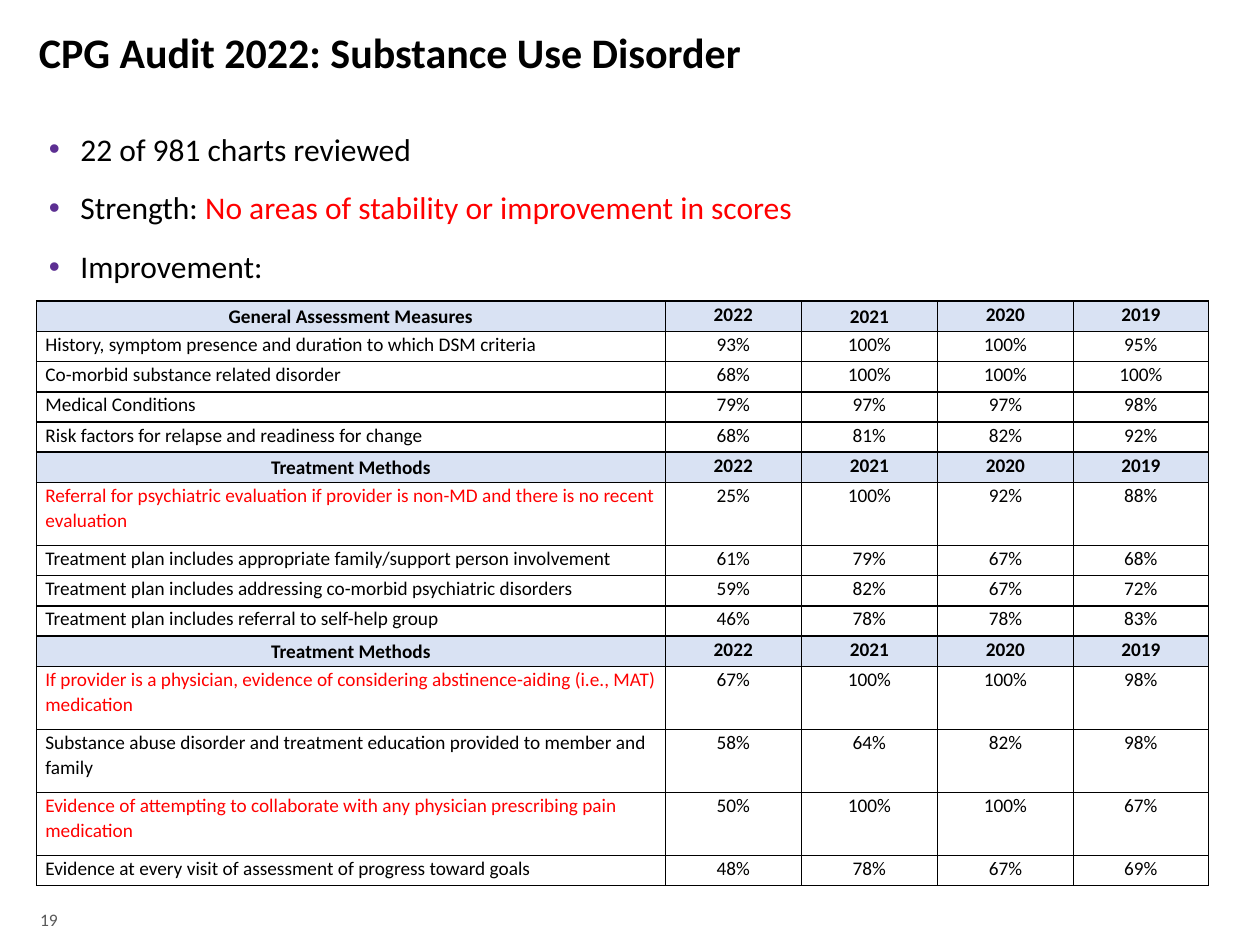
from lxml.etree import SubElement
from pptx import Presentation
from pptx.dml.color import RGBColor
from pptx.enum.text import MSO_ANCHOR, PP_ALIGN
from pptx.oxml.ns import qn
from pptx.util import Inches, Pt

COLORS = {
    "text": "000000", "alert": "FF0000", "bullet": "5C2F92", "number": "595959",
    "header": "D9E2F3", "body": "FFFFFF", "border": "000000",
}
FONT = "Calibri"
YEARS = ["2022", "2021", "2020", "2019"]
COLUMN_WIDTHS = [4.99, 1.08, 1.08, 1.08, 1.07]
BULLETS = [
    [("22 of 981 charts reviewed", "text")],
    [("Strength: ", "text"), ("No areas of stability or improvement in scores", "alert")],
    [("Improvement:", "text")],
]
SECTIONS = [
    ("General Assessment Measures", [
        ("History, symptom presence and duration to which DSM criteria", [93, 100, 100, 95]),
        ("Co-morbid substance related disorder", [68, 100, 100, 100]),
        ("Medical Conditions", [79, 97, 97, 98]),
        ("Risk factors for relapse and readiness for change", [68, 81, 82, 92]),
    ]),
    ("Treatment Methods", [
        ("Referral for psychiatric evaluation if provider is non-MD and there is no recent evaluation",
         [25, 100, 92, 88]),
        ("Treatment plan includes appropriate family/support person involvement", [61, 79, 67, 68]),
        ("Treatment plan includes addressing co-morbid psychiatric disorders", [59, 82, 67, 72]),
        ("Treatment plan includes referral to self-help group", [46, 78, 78, 83]),
    ]),
    ("Treatment Methods", [
        ("If provider is a physician, evidence of considering abstinence-aiding (i.e., MAT) medication",
         [67, 100, 100, 98]),
        ("Substance abuse disorder and treatment education provided to member and family",
         [58, 64, 82, 98]),
        ("Evidence of attempting to collaborate with any physician prescribing pain medication",
         [50, 100, 100, 67]),
        ("Evidence at every visit of assessment of progress toward goals", [48, 78, 67, 69]),
    ]),
]
ALERT_STARTS = ("Referral for", "If provider", "Evidence of")
WRAP_LENGTH = 75


def rgb(name):
    """Return the named colour."""
    return RGBColor.from_string(COLORS[name])


def add_run(p, text, size, color="text", bold=False):
    """Append a styled run to a paragraph."""
    r = p.add_run()
    r.text = text
    r.font.name = FONT
    r.font.size = Pt(size)
    r.font.bold = bold
    r.font.color.rgb = rgb(color)


def add_frame(s, box, anchor=MSO_ANCHOR.TOP):
    """Add a wrapping text box and return its text frame."""
    tf = s.shapes.add_textbox(*map(Inches, box)).text_frame
    tf.word_wrap = True
    tf.vertical_anchor = anchor
    return tf


def add_title(s, box):
    """Place the slide title."""
    p = add_frame(s, box).paragraphs[0]
    p.line_spacing = 0.9
    add_run(p, "CPG Audit 2022: Substance Use Disorder", 24, bold=True)


def add_bullets(s, box):
    """Place the bulleted findings."""
    tf = add_frame(s, box)
    for i, runs in enumerate(BULLETS):
        p = tf.add_paragraph() if i else tf.paragraphs[0]
        pPr = p._p.get_or_add_pPr()
        pPr.set("marL", str(Inches(0.25)))
        pPr.set("indent", str(-Inches(0.25)))
        if i:
            p.space_before = Pt(12)
        color = SubElement(pPr, qn("a:buClr"))
        SubElement(color, qn("a:srgbClr"), val=COLORS["bullet"])
        SubElement(pPr, qn("a:buFont"), typeface="Arial")
        SubElement(pPr, qn("a:buChar"), char="•")
        for text, name in runs:
            add_run(p, text, 18, name)


def add_page_number(s, box):
    """Place the page number."""
    add_run(add_frame(s, box, MSO_ANCHOR.BOTTOM).paragraphs[0], "19", 10, "number")


def set_borders(cell):
    """Draw a thin line on all four sides of a cell."""
    tcPr = cell._tc.get_or_add_tcPr()
    for i, side in enumerate(("a:lnL", "a:lnR", "a:lnT", "a:lnB")):
        ln = tcPr.makeelement(qn(side), {"w": str(Pt(1))})
        fill = SubElement(ln, qn("a:solidFill"))
        SubElement(fill, qn("a:srgbClr"), val=COLORS["border"])
        tcPr.insert(i, ln)


def fill_cell(cell, text, header, centered, middle, color="text"):
    """Write and style one table cell."""
    cell.margin_left = cell.margin_right = Inches(0.07)
    cell.margin_top = cell.margin_bottom = 0
    cell.vertical_anchor = MSO_ANCHOR.MIDDLE if middle else MSO_ANCHOR.TOP
    cell.fill.solid()
    cell.fill.fore_color.rgb = rgb("header" if header else "body")
    set_borders(cell)
    p = cell.text_frame.paragraphs[0]
    p.alignment = PP_ALIGN.CENTER if centered else PP_ALIGN.LEFT
    p.line_spacing = 1.07
    if header or not centered:
        p.space_after = Pt(3)
    add_run(p, text, 11, color, header)


def add_scores(s, box):
    """Place the table of audit scores by year."""
    rows = []
    for heading, measures in SECTIONS:
        rows.append((True, [heading] + YEARS))
        rows += [(False, [label] + [f"{v}%" for v in values]) for label, values in measures]
    table = s.shapes.add_table(len(rows), len(COLUMN_WIDTHS), *map(Inches, box)).table
    for column, width in zip(table.columns, COLUMN_WIDTHS):
        column.width = Inches(width)
    for i, (header, texts) in enumerate(rows):
        table.rows[i].height = Inches(0.5 if len(texts[0]) > WRAP_LENGTH else 0.24)
        for j, text in enumerate(texts):
            middle = header and (j == 0 or (i, j) == (0, 2))
            color = "alert" if text.startswith(ALERT_STARTS) else "text"
            fill_cell(table.cell(i, j), text, header, header or j > 0, middle, color)


def main():
    """Build and save the slide."""
    prs = Presentation()
    prs.slide_width, prs.slide_height = Inches(10), Inches(7.5)
    s = prs.slides.add_slide(prs.slide_layouts[6])
    add_bullets(s, (0.29, 0.98, 9.06, 4.76))
    add_page_number(s, (0.22, 7.03, 0.44, 0.4))
    add_title(s, (0.21, 0.21, 8.27, 1.24))
    add_scores(s, (0.29, 2.39, 9.3, 4.64))
    prs.save("out.pptx")


if __name__ == "__main__":
    main()
